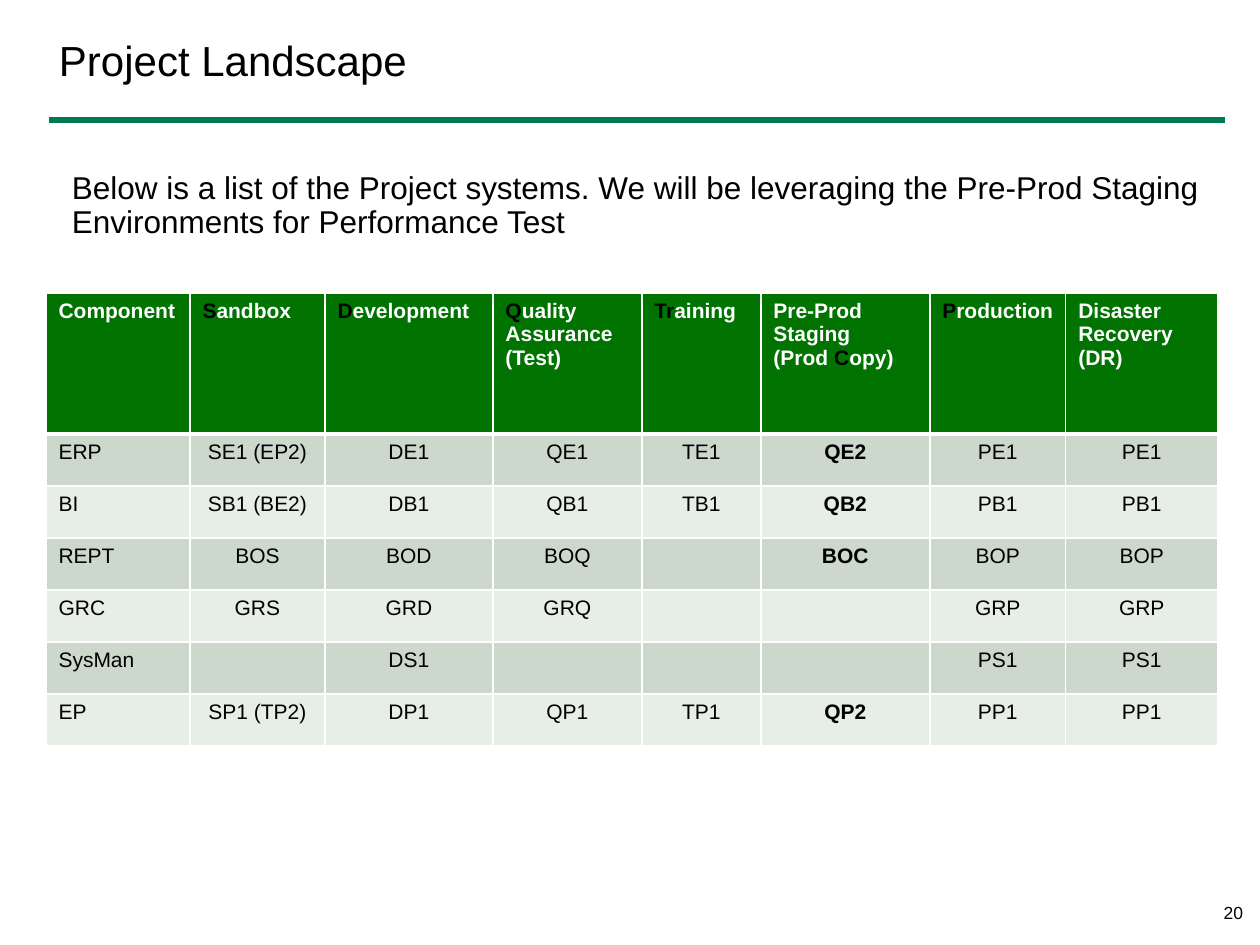
from dataclasses import dataclass

import pptx
import pptx.dml.color
import pptx.enum.shapes
import pptx.enum.text
import pptx.oxml
import pptx.oxml.ns
import pptx.util
from lxml import etree

SCALE = 914400 / 126
FONT = "Arial"
BLACK, WHITE, GREEN = "000000", "FFFFFF", "007300"
BANDS = ["CCD8CC", "E7EDE7"]
ALIGN = pptx.enum.text.PP_ALIGN
ANCHOR = pptx.enum.text.MSO_ANCHOR

WIDTHS = [144, 135, 168, 149, 119, 169, 136, 152]
HEAD_ROW, BODY_ROW = 141, 52
STAGING = 5
HEADS = ["Component", "*S*andbox", "*D*evelopment",
         "*Q*uality Assurance\n(Test)", "*Tr*aining",
         "Pre-Prod Staging\n(Prod *C*opy)", "*P*roduction",
         "Disaster Recovery (DR)"]
SYSTEMS = [
    ["ERP", "SE1 (EP2)", "DE1", "QE1", "TE1", "QE2", "PE1", "PE1"],
    ["BI", "SB1 (BE2)", "DB1", "QB1", "TB1", "QB2", "PB1", "PB1"],
    ["REPT", "BOS", "BOD", "BOQ", "", "BOC", "BOP", "BOP"],
    ["GRC", "GRS", "GRD", "GRQ", "", "", "GRP", "GRP"],
    ["SysMan", "", "DS1", "", "", "", "PS1", "PS1"],
    ["EP", "SP1 (TP2)", "DP1", "QP1", "TP1", "QP2", "PP1", "PP1"],
]


@dataclass
class Label:
    text: str
    left: int
    top: int
    width: int
    height: int
    size: int
    space: float = 1.0
    align: ALIGN = ALIGN.LEFT
    inset: int = 13
    anchor: ANCHOR = ANCHOR.TOP


def px(count: int) -> int:
    return pptx.util.Emu(round(count * SCALE))


def color(code: str) -> pptx.dml.color.RGBColor:
    return pptx.dml.color.RGBColor.from_string(code)


def style(para, size: int, align: ALIGN, bold: bool = False) -> None:
    para.alignment = align
    para.font.name = FONT
    para.font.size = pptx.util.Pt(size)
    para.font.bold = bold


def write(shape, label: Label) -> None:
    shape.left, shape.top = px(label.left), px(label.top)
    shape.width, shape.height = px(label.width), px(label.height)
    frame = shape.text_frame
    frame.word_wrap = True
    frame.auto_size = pptx.enum.text.MSO_AUTO_SIZE.NONE
    frame.vertical_anchor = label.anchor
    frame.margin_left = frame.margin_right = px(label.inset)
    frame.margin_top = frame.margin_bottom = px(6)
    frame.text = label.text
    para = frame.paragraphs[0]
    style(para, label.size, label.align)
    para.font.color.rgb = color(BLACK)
    para.line_spacing = label.space


def border(cell, side: str, points: int) -> None:
    props = cell._tc.get_or_add_tcPr()
    line = etree.SubElement(props, pptx.oxml.ns.qn(f"a:{side}"),
                            w=str(pptx.util.Pt(points)))
    fill = etree.SubElement(line, pptx.oxml.ns.qn("a:solidFill"))
    etree.SubElement(fill, pptx.oxml.ns.qn("a:srgbClr"), val=WHITE)


def paint(cell, fill: str, top: int, bottom: int) -> None:
    for side, points in (("lnL", 1), ("lnR", 1), ("lnT", top), ("lnB", bottom)):
        border(cell, side, points)
    cell.fill.solid()
    cell.fill.fore_color.rgb = color(fill)


def head(cell, text: str) -> None:
    paint(cell, GREEN, 1, 3)
    frame = cell.text_frame
    for index, row in enumerate(text.split("\n")):
        para = frame.add_paragraph() if index else frame.paragraphs[0]
        style(para, 12, ALIGN.LEFT, True)
        for part, piece in enumerate(row.split("*")):
            if piece:
                run = para.add_run()
                run.text = piece
                run.font.color.rgb = color(BLACK if part % 2 else WHITE)


def body(cell, text: str, row: int, col: int) -> None:
    paint(cell, BANDS[row % 2], 1 if row else 3, 1)
    cell.text = text
    para = cell.text_frame.paragraphs[0]
    style(para, 12, ALIGN.CENTER if col else ALIGN.LEFT, col == STAGING)
    para.font.color.rgb = color(BLACK)


def grid(slide) -> None:
    high = HEAD_ROW + BODY_ROW * len(SYSTEMS)
    table = slide.shapes.add_table(len(SYSTEMS) + 1, len(HEADS), px(46), px(293),
                                   px(sum(WIDTHS)), px(high)).table
    for col, width in enumerate(WIDTHS):
        table.columns[col].width = px(width)
        head(table.cell(0, col), HEADS[col])
    table.rows[0].height = px(HEAD_ROW)
    for row, names in enumerate(SYSTEMS):
        table.rows[row + 1].height = px(BODY_ROW)
        for col, name in enumerate(names):
            body(table.cell(row + 1, col), name, row, col)


def rule(slide) -> None:
    line = slide.shapes.add_connector(pptx.enum.shapes.MSO_CONNECTOR.STRAIGHT,
                                      px(49), px(120), px(1225), px(120))
    line.line.color.rgb = color("007A50")
    line.line.width = pptx.util.Pt(3)
    etree.SubElement(line._element.spPr, pptx.oxml.ns.qn("a:effectLst"))


def main() -> None:
    deck = pptx.Presentation()
    deck.slide_width, deck.slide_height = px(1260), px(945)
    slide = deck.slides.add_slide(deck.slide_layouts[5])
    rule(slide)
    write(slide.shapes.title,
          Label("Project Landscape", 53, 11, 1028, 98, 24,
                inset=6, anchor=ANCHOR.MIDDLE))
    for label in (
        Label("20", 963, 900, 293, 49, 10, 0.8, ALIGN.RIGHT),
        Label("Below is a list of the Project systems. We will be leveraging "
              "the Pre-Prod Staging Environments for Performance Test",
              59, 166, 1158, 82, 18, 0.9),
    ):
        write(slide.shapes.add_textbox(0, 0, 0, 0), label)
    grid(slide)
    deck.save("out.pptx")


if __name__ == "__main__":
    main()
